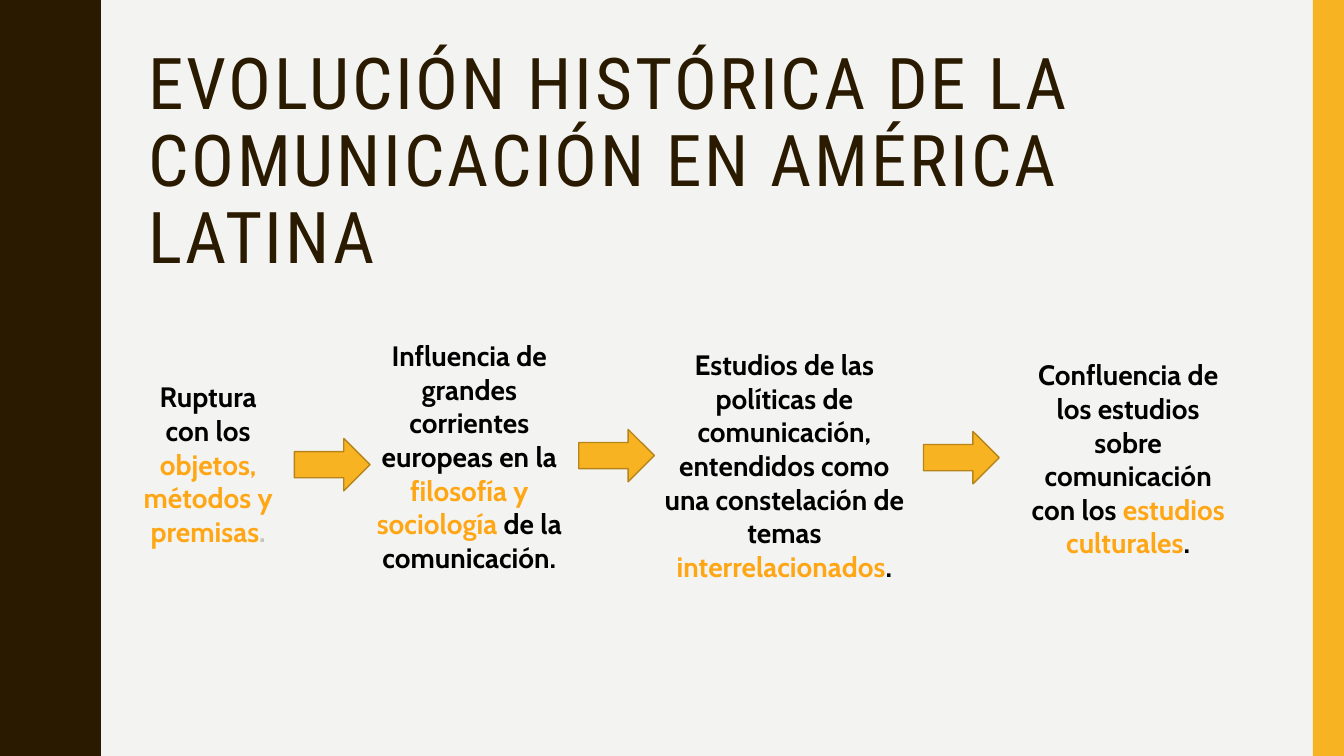
from pptx import Presentation
from pptx.dml.color import RGBColor
from pptx.enum.shapes import MSO_SHAPE as Shape
from pptx.enum.text import MSO_ANCHOR as Anchor, MSO_AUTO_SIZE as Fit, PP_ALIGN as Align
from pptx.util import Inches, Pt

WIDE, HIGH = 13.33, 7.5
DARK = RGBColor(0x2A, 0x1A, 0x00)
GOLD = RGBColor(0xF8, 0xB3, 0x23)
EDGE = RGBColor(0xB7, 0x84, 0x1A)
PAPER = RGBColor(0xF3, 0xF3, 0xF2)
BLACK = RGBColor(0, 0, 0)
ORANGE = RGBColor(0xFF, 0xA6, 0x15)
GREY = RGBColor(0xC2, 0xC5, 0xBB)

TITLE = "EVOLUCIÓN HISTÓRICA DE LA COMUNICACIÓN EN AMÉRICA LATINA"

# Each stage: left, top, width, height in inches, then its runs
STAGES = [
    ((1.25, 3.72, 1.63, 1.78), [
        ("Ruptura con los ", BLACK),
        ("objetos, métodos y premisas", ORANGE),
        (".", GREY)]),
    ((3.57, 3.31, 2.17, 2.46), [
        ("Influencia de grandes corrientes europeas en la ", BLACK),
        ("filosofía y sociología ", ORANGE),
        ("de la comunicación.", BLACK)]),
    ((6.46, 3.4, 2.64, 2.46), [
        ("Estudios de las políticas de comunicación, entendidos como "
         "una constelación de temas ", BLACK),
        ("interrelacionados", ORANGE),
        (".", BLACK)]),
    ((10.06, 3.5, 2.26, 2.12), [
        ("Confluencia de los estudios sobre comunicación con los ", BLACK),
        ("estudios culturales", ORANGE),
        (".", BLACK)]),
]
ARROWS = [(2.92, 4.35), (5.74, 4.26), (9.16, 4.28)]
ARROW_SIZE = (0.75, 0.52)

# Half a wave of the left edge, as x and y in inches
HALF = [(0.78, 0), (0.78, 0.07), (0.79, 0.14), (0.8, 0.2), (0.81, 0.25),
        (0.83, 0.29), (0.85, 0.33), (0.87, 0.38), (0.89, 0.42), (0.91, 0.46),
        (0.93, 0.5), (0.95, 0.55), (0.96, 0.61), (0.97, 0.68), (0.97, 0.75)]
WAVE = 1.5
BAR = 0.31


def paint(shape, fill, line=None):
    shape.shadow.inherit = False
    shape.fill.solid()
    shape.fill.fore_color.rgb = fill
    if line is None:
        shape.line.fill.background()
    else:
        shape.line.color.rgb = line
        shape.line.width = Pt(1)


def add_run(para, text, font, size, color, bold=False):
    run = para.add_run()
    run.text = text
    run.font.name = font
    run.font.size = Pt(size)
    run.font.bold = bold
    run.font.color.rgb = color
    return run


def add_wave(shapes):
    """Draw the dark band whose right edge repeats one wave down the slide."""
    cycle = HALF + [(x, WAVE - y) for x, y in HALF[-2:0:-1]]
    edge = [(x, y + n * WAVE) for n in range(int(HIGH / WAVE)) for x, y in cycle]
    edge += [(HALF[0][0], HIGH), (0, HIGH)]
    pen = shapes.build_freeform(0, 0, scale=Inches(1))
    pen.add_line_segments(edge, close=True)
    paint(pen.convert_to_shape(), DARK)


def add_title(slide):
    title = slide.shapes.title
    title.left, title.top, title.width, title.height = map(
        Inches, (1.37, 0.42, 11.13, 1.63))
    frame = title.text_frame
    frame.word_wrap = True
    frame.auto_size = Fit.NONE
    frame.vertical_anchor = Anchor.TOP
    para = frame.paragraphs[0]
    para.alignment = Align.LEFT
    para.line_spacing = 0.9
    para.space_before = Pt(0)
    run = add_run(para, TITLE, "Roboto Condensed", 51, DARK)
    run.font._element.set("spc", "200")


def add_stage(shapes, place, runs):
    frame = shapes.add_textbox(*map(Inches, place)).text_frame
    frame.word_wrap = True
    frame.auto_size = Fit.SHAPE_TO_FIT_TEXT
    para = frame.paragraphs[0]
    para.alignment = Align.CENTER
    for text, color in runs:
        add_run(para, text, "Cabin", 20, color, True)


def main():
    deck = Presentation()
    deck.slide_width, deck.slide_height = Inches(WIDE), Inches(HIGH)
    slide = deck.slides.add_slide(deck.slide_layouts[5])
    slide.background.fill.solid()
    slide.background.fill.fore_color.rgb = PAPER
    shapes = slide.shapes

    add_wave(shapes)
    bar = shapes.add_shape(Shape.RECTANGLE, *map(Inches, (WIDE - BAR, 0, BAR, HIGH)))
    paint(bar, GOLD)
    add_title(slide)
    for place, runs in STAGES:
        add_stage(shapes, place, runs)
    for spot in ARROWS:
        arrow = shapes.add_shape(Shape.RIGHT_ARROW, *map(Inches, spot + ARROW_SIZE))
        paint(arrow, GOLD, EDGE)
    deck.save("out.pptx")


if __name__ == "__main__":
    main()
